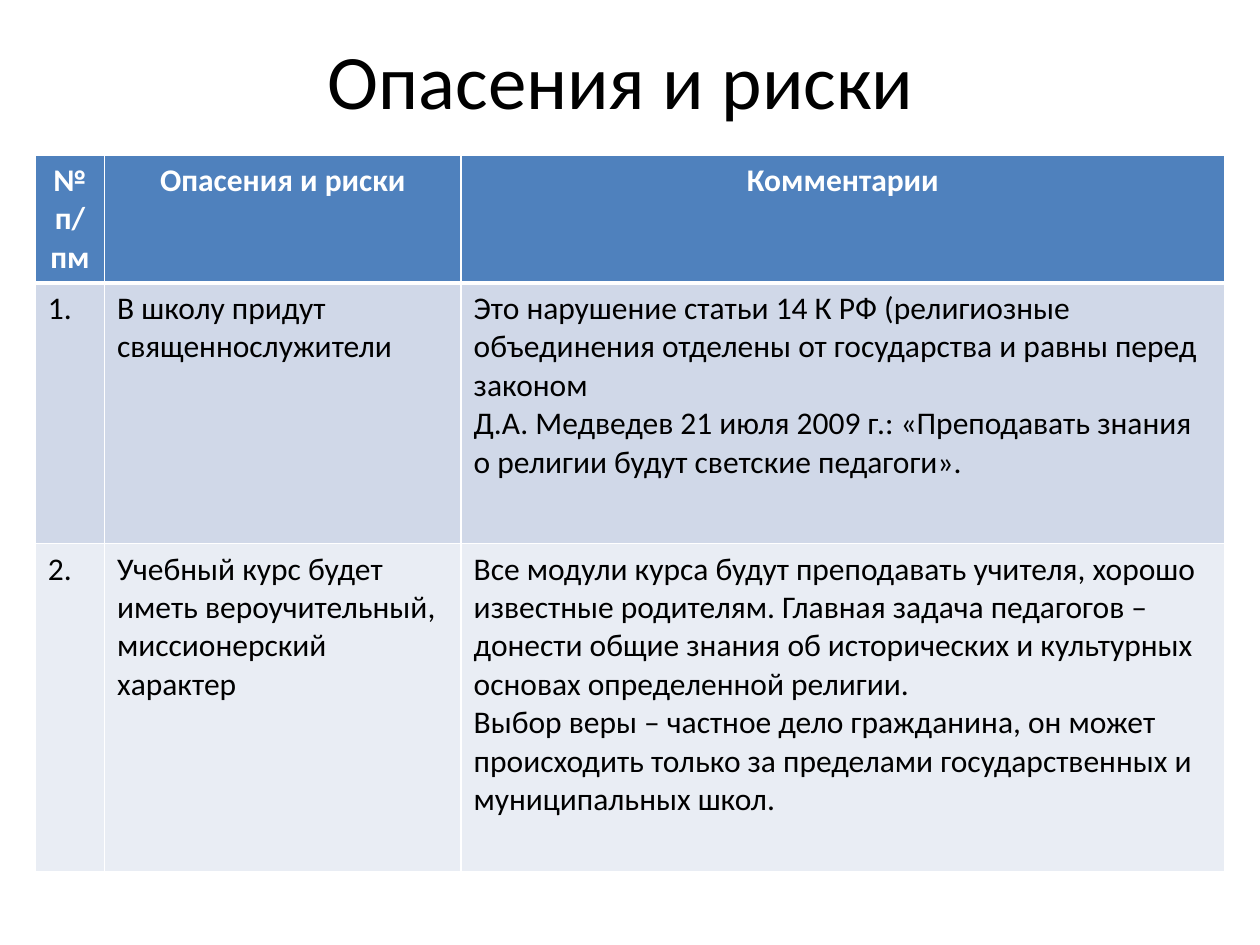
from lxml import etree
from pptx import Presentation
from pptx import util as u
from pptx.dml import color
from pptx.enum import text
from pptx.oxml import ns

WIDTH, HEIGHT = 10, 7.5
FONT = "Calibri"
WHITE, BLACK = "FFFFFF", "000000"
ROW_FILLS = ["4F81BD", "D0D8E8", "E9EDF4"]
COLUMN_WIDTHS = [0.55, 2.83, 6.06]
ROW_HEIGHTS = [0.94, 2.07, 2.6]

HEADING = "Опасения и риски"
RISKS = [
    [["№ п/пм"], ["Опасения и риски"], ["Комментарии"]],
    [
        ["1."],
        ["В школу придут священнослужители"],
        [
            "Это нарушение статьи 14 К РФ (религиозные объединения отделены "
            "от государства и равны перед законом",
            "Д.А. Медведев 21 июля 2009 г.: «Преподавать знания о религии "
            "будут светские педагоги».",
        ],
    ],
    [
        ["2."],
        ["Учебный курс будет иметь вероучительный, миссионерский характер"],
        [
            "Все модули курса будут преподавать учителя, хорошо известные "
            "родителям. Главная задача педагогов – донести общие знания об "
            "исторических и культурных основах определенной религии.",
            "Выбор веры – частное дело гражданина, он может происходить только "
            "за пределами государственных и муниципальных школ.",
        ],
    ],
]


def rgb(hex_colour):
    return color.RGBColor.from_string(hex_colour)


def write(frame, paragraphs, size, colour, bold=False, align=text.PP_ALIGN.LEFT):
    """Fill a text frame with one run for each paragraph."""
    for index, wording in enumerate(paragraphs):
        paragraph = frame.add_paragraph() if index else frame.paragraphs[0]
        paragraph.alignment = align
        run = paragraph.add_run()
        run.text = wording
        run.font.name = FONT
        run.font.size = u.Pt(size)
        run.font.bold = bold
        run.font.color.rgb = rgb(colour)


def set_borders(cell, bottom_width):
    properties = cell._tc.get_or_add_tcPr()
    widths = {"lnL": 1, "lnR": 1, "lnT": 1, "lnB": bottom_width}
    for position, (side, width) in enumerate(widths.items()):
        line = etree.Element(ns.qn(f"a:{side}"), w=str(u.Pt(width)))
        fill = etree.SubElement(line, ns.qn("a:solidFill"))
        etree.SubElement(fill, ns.qn("a:srgbClr"), val=WHITE)
        properties.insert(position, line)


def place_title(slide, left, top, width, height):
    title = slide.shapes.title
    title.left, title.top = u.Inches(left), u.Inches(top)
    title.width, title.height = u.Inches(width), u.Inches(height)
    title.text_frame.vertical_anchor = text.MSO_ANCHOR.MIDDLE
    write(title.text_frame, [HEADING], 44, BLACK, align=text.PP_ALIGN.CENTER)


def place_risk_table(slide, left, top):
    table = slide.shapes.add_table(
        len(ROW_HEIGHTS), len(COLUMN_WIDTHS), u.Inches(left), u.Inches(top),
        u.Inches(sum(COLUMN_WIDTHS)), u.Inches(sum(ROW_HEIGHTS))).table
    for column, width in zip(table.columns, COLUMN_WIDTHS):
        column.width = u.Inches(width)
    for index, (row, height) in enumerate(zip(table.rows, ROW_HEIGHTS)):
        row.height = u.Inches(height)
        is_header = index == 0
        for cell, paragraphs in zip(row.cells, RISKS[index]):
            cell.fill.solid()
            cell.fill.fore_color.rgb = rgb(ROW_FILLS[index])
            set_borders(cell, 3 if is_header else 1)
            write(cell.text_frame, paragraphs, 18,
                  WHITE if is_header else BLACK, bold=is_header,
                  align=text.PP_ALIGN.CENTER if is_header else text.PP_ALIGN.LEFT)


def main():
    deck = Presentation()
    deck.slide_width, deck.slide_height = u.Inches(WIDTH), u.Inches(HEIGHT)
    slide = deck.slides.add_slide(deck.slide_layouts[5])
    slide.background.fill.solid()
    slide.background.fill.fore_color.rgb = rgb(WHITE)
    place_title(slide, 0.043 * WIDTH, 0, 0.9 * WIDTH, HEIGHT / 6)
    place_risk_table(slide, 0.028 * WIDTH, 0.164 * HEIGHT)
    deck.save("out.pptx")


if __name__ == "__main__":
    main()
